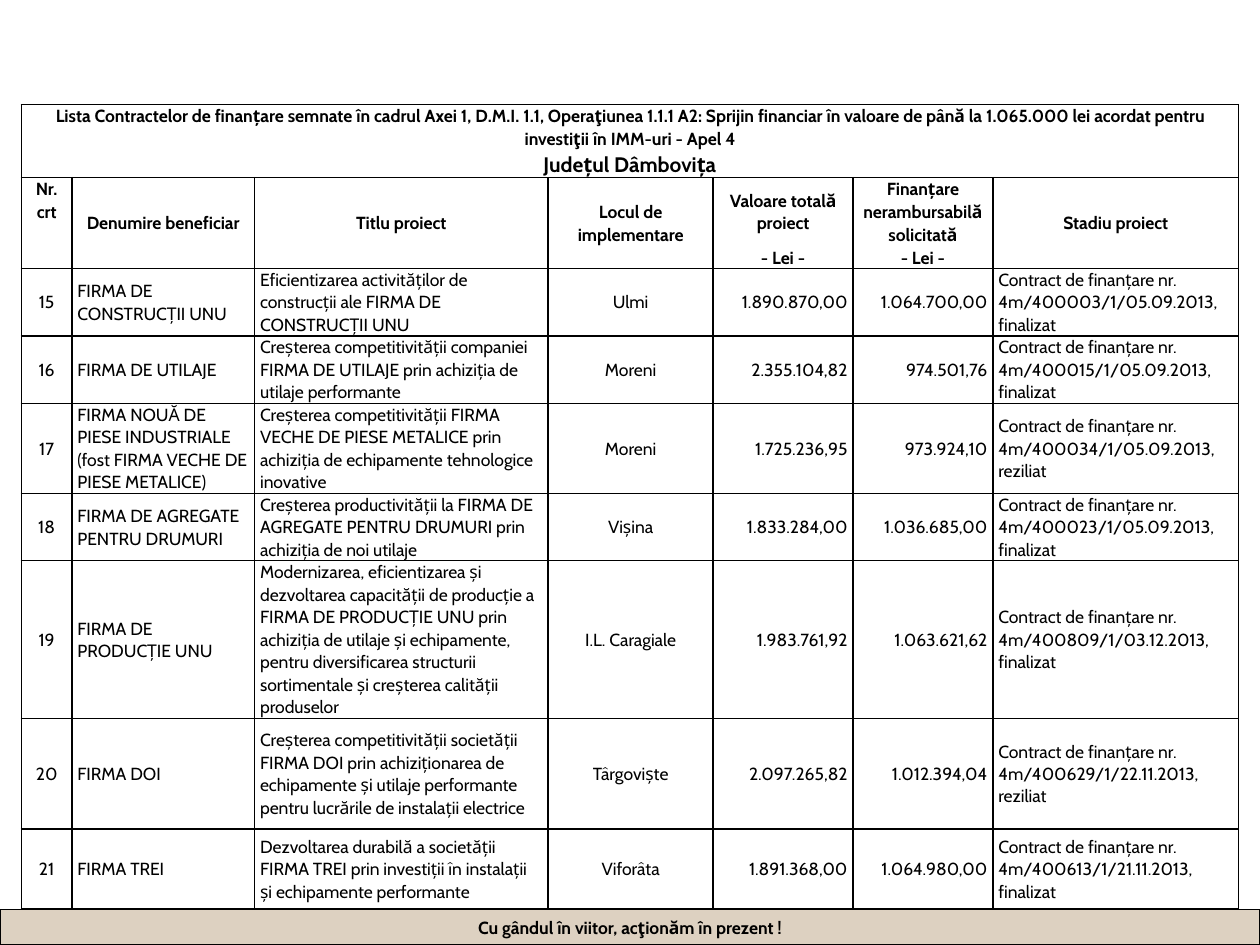
from dataclasses import dataclass

from lxml import etree
from pptx import Presentation
from pptx.dml.color import RGBColor
from pptx.enum import shapes, text
from pptx.oxml import ns
from pptx.table import Table, _Cell
from pptx.text.text import TextFrame
from pptx.util import Pt

BLACK = RGBColor(0x00, 0x00, 0x00)
WHITE = RGBColor(0xFF, 0xFF, 0xFF)
SAND = RGBColor(0xDD, 0xD1, 0xC1)
FONT = "Cabin"
LEFT, CENTER, RIGHT = text.PP_ALIGN.LEFT, text.PP_ALIGN.CENTER, text.PP_ALIGN.RIGHT
TOP, MIDDLE = text.MSO_ANCHOR.TOP, text.MSO_ANCHOR.MIDDLE

SLIDE_WIDTH, SLIDE_HEIGHT = 720, 540
FOOTER_TOP = 519.84
TABLE_LEFT, TABLE_TOP = 12.24, 59.76
HEADER_HEIGHTS = [41.76, 30.24, 10.8]
CELL_MARGIN = 3.2
HEADER_SPACING, BODY_SPACING = 1.07, 1.06
ALL_SIDES = "LRTB"


@dataclass(frozen=True)
class Column:
    heading: str
    width: float
    align: text.PP_ALIGN
    filled: bool = False
    in_lei: bool = False
    heading_anchor: text.MSO_ANCHOR = MIDDLE


@dataclass(frozen=True)
class Contract:
    number: int
    beneficiary: str
    project: str
    place: str
    total: str
    grant: str
    reference: str
    status: str
    height: float

    def values(self) -> list[str]:
        stage = f"Contract de finanțare nr. {self.reference}, {self.status}"
        return [str(self.number), self.beneficiary, self.project, self.place,
                self.total, self.grant, stage]


COLUMNS = [
    Column("Nr. crt", 28.8, CENTER, filled=True, heading_anchor=TOP),
    Column("Denumire beneficiar", 104.4, LEFT, filled=True),
    Column("Titlu proiect", 167.76, LEFT, filled=True),
    Column("Locul de implementare", 94.32, CENTER, filled=True),
    Column("Valoare totală proiect", 79.92, RIGHT, in_lei=True),
    Column("Finanțare nerambursabilă solicitată", 79.92, RIGHT, in_lei=True),
    Column("Stadiu proiect", 140.4, LEFT),
]

CONTRACTS = [
    Contract(15, "FIRMA DE CONSTRUCȚII UNU",
             "Eficientizarea activităților de construcții ale FIRMA DE CONSTRUCȚII UNU",
             "Ulmi", "1.890.870,00", "1.064.700,00",
             "4m/400003/1/05.09.2013", "finalizat", 36),
    Contract(16, "FIRMA DE UTILAJE",
             "Creșterea competitivității companiei FIRMA DE UTILAJE prin achiziția de "
             "utilaje performante",
             "Moreni", "2.355.104,82", "974.501,76",
             "4m/400015/1/05.09.2013", "finalizat", 36),
    Contract(17, "FIRMA NOUĂ DE PIESE INDUSTRIALE (fost FIRMA VECHE DE PIESE METALICE)",
             "Creșterea competitivității FIRMA VECHE DE PIESE METALICE prin achiziția de "
             "echipamente tehnologice inovative",
             "Moreni", "1.725.236,95", "973.924,10",
             "4m/400034/1/05.09.2013", "reziliat", 45.36),
    Contract(18, "FIRMA DE AGREGATE PENTRU DRUMURI",
             "Creșterea productivității la FIRMA DE AGREGATE PENTRU DRUMURI prin "
             "achiziția de noi utilaje",
             "Vișina", "1.833.284,00", "1.036.685,00",
             "4m/400023/1/05.09.2013", "finalizat", 36),
    Contract(19, "FIRMA DE PRODUCȚIE UNU",
             "Modernizarea, eficientizarea și dezvoltarea capacității de producție a "
             "FIRMA DE PRODUCȚIE UNU prin achiziția de utilaje și echipamente, pentru "
             "diversificarea structurii sortimentale și creșterea calității produselor",
             "I.L. Caragiale", "1.983.761,92", "1.063.621,62",
             "4m/400809/1/03.12.2013", "finalizat", 90),
    Contract(20, "FIRMA DOI",
             "Creșterea competitivității societății FIRMA DOI prin achiziționarea de "
             "echipamente și utilaje performante pentru lucrările de instalații electrice",
             "Târgoviște", "2.097.265,82", "1.012.394,04",
             "4m/400629/1/22.11.2013", "reziliat", 63.36),
    Contract(21, "FIRMA TREI",
             "Dezvoltarea durabilă a societății FIRMA TREI prin investiții în instalații "
             "și echipamente performante",
             "Viforâta", "1.891.368,00", "1.064.980,00",
             "4m/400613/1/21.11.2013", "finalizat", 45.36),
]


def write_line(frame: TextFrame, words: str, align: text.PP_ALIGN, spacing: float = 1.0,
               bold: bool = True, size: float = 10, first: bool = True) -> None:
    line = frame.paragraphs[0] if first else frame.add_paragraph()
    line.alignment = align
    line.line_spacing = spacing
    run = line.add_run()
    run.text = words
    run.font.name = FONT
    run.font.size = Pt(size)
    run.font.bold = bold
    run.font.color.rgb = BLACK


def format_cell(cell: _Cell, sides: str = ALL_SIDES, filled: bool = False,
                anchor: text.MSO_ANCHOR = MIDDLE) -> None:
    """Set margins, anchor, borders on the given sides, and then the fill."""
    cell.margin_left = cell.margin_right = Pt(CELL_MARGIN)
    cell.margin_top = cell.margin_bottom = 0
    cell.vertical_anchor = anchor
    properties = cell._tc.get_or_add_tcPr()
    for side in ALL_SIDES:
        border = etree.SubElement(properties, ns.qn(f"a:ln{side}"), w=str(Pt(1)))
        if side in sides:
            paint = etree.SubElement(border, ns.qn("a:solidFill"))
            etree.SubElement(paint, ns.qn("a:srgbClr"), val=str(BLACK))
        else:
            etree.SubElement(border, ns.qn("a:noFill"))
    if filled:
        cell.fill.solid()
        cell.fill.fore_color.rgb = WHITE
    else:
        cell.fill.background()


def fill_heading(table: Table) -> None:
    for index in range(len(COLUMNS)):
        format_cell(table.cell(0, index), anchor=TOP)
    banner = table.cell(0, 0)
    banner.merge(table.cell(0, len(COLUMNS) - 1))
    write_line(banner.text_frame,
               "Lista Contractelor de finanțare semnate în cadrul Axei 1, D.M.I. 1.1, "
               "Operaţiunea 1.1.1 A2: Sprijin financiar în valoare de până la 1.065.000 lei "
               "acordat pentru investiţii în IMM-uri - Apel 4", CENTER, HEADER_SPACING)
    write_line(banner.text_frame, "Județul Dâmbovița", CENTER, HEADER_SPACING,
               size=12, first=False)

    for index, column in enumerate(COLUMNS):
        upper, lower = table.cell(1, index), table.cell(2, index)
        format_cell(upper, "LRT" if column.in_lei else ALL_SIDES,
                    anchor=column.heading_anchor)
        format_cell(lower, "LRB" if column.in_lei else ALL_SIDES)
        write_line(upper.text_frame, column.heading, CENTER, HEADER_SPACING)
        if column.in_lei:
            write_line(lower.text_frame, "- Lei -", CENTER, HEADER_SPACING)
        else:
            upper.merge(lower)


def add_contract_table(slide) -> None:
    heights = HEADER_HEIGHTS + [contract.height for contract in CONTRACTS]
    widths = [column.width for column in COLUMNS]
    table = slide.shapes.add_table(len(heights), len(widths), Pt(TABLE_LEFT), Pt(TABLE_TOP),
                                   Pt(sum(widths)), Pt(sum(heights))).table
    table.first_row = table.horz_banding = False
    for row, height in zip(table.rows, heights):
        row.height = Pt(height)
    for table_column, width in zip(table.columns, widths):
        table_column.width = Pt(width)

    fill_heading(table)
    for row_index, contract in enumerate(CONTRACTS, start=len(HEADER_HEIGHTS)):
        for index, (column, value) in enumerate(zip(COLUMNS, contract.values())):
            cell = table.cell(row_index, index)
            format_cell(cell, filled=column.filled)
            write_line(cell.text_frame, value, column.align, BODY_SPACING, bold=False)


def add_footer(slide) -> None:
    footer = slide.shapes.add_shape(shapes.MSO_SHAPE.RECTANGLE, 0, Pt(FOOTER_TOP),
                                    Pt(SLIDE_WIDTH), Pt(SLIDE_HEIGHT - FOOTER_TOP))
    footer.shadow.inherit = False
    footer.fill.solid()
    footer.fill.fore_color.rgb = SAND
    footer.line.color.rgb = BLACK
    footer.line.width = Pt(0.75)
    footer.text_frame.word_wrap = False
    footer.text_frame.vertical_anchor = MIDDLE
    write_line(footer.text_frame, "Cu gândul în viitor, acţionăm în prezent !", CENTER)


def main() -> None:
    deck = Presentation()
    deck.slide_width, deck.slide_height = Pt(SLIDE_WIDTH), Pt(SLIDE_HEIGHT)
    slide = deck.slides.add_slide(deck.slide_layouts[6])
    add_footer(slide)
    add_contract_table(slide)
    deck.save("out.pptx")


if __name__ == "__main__":
    main()
